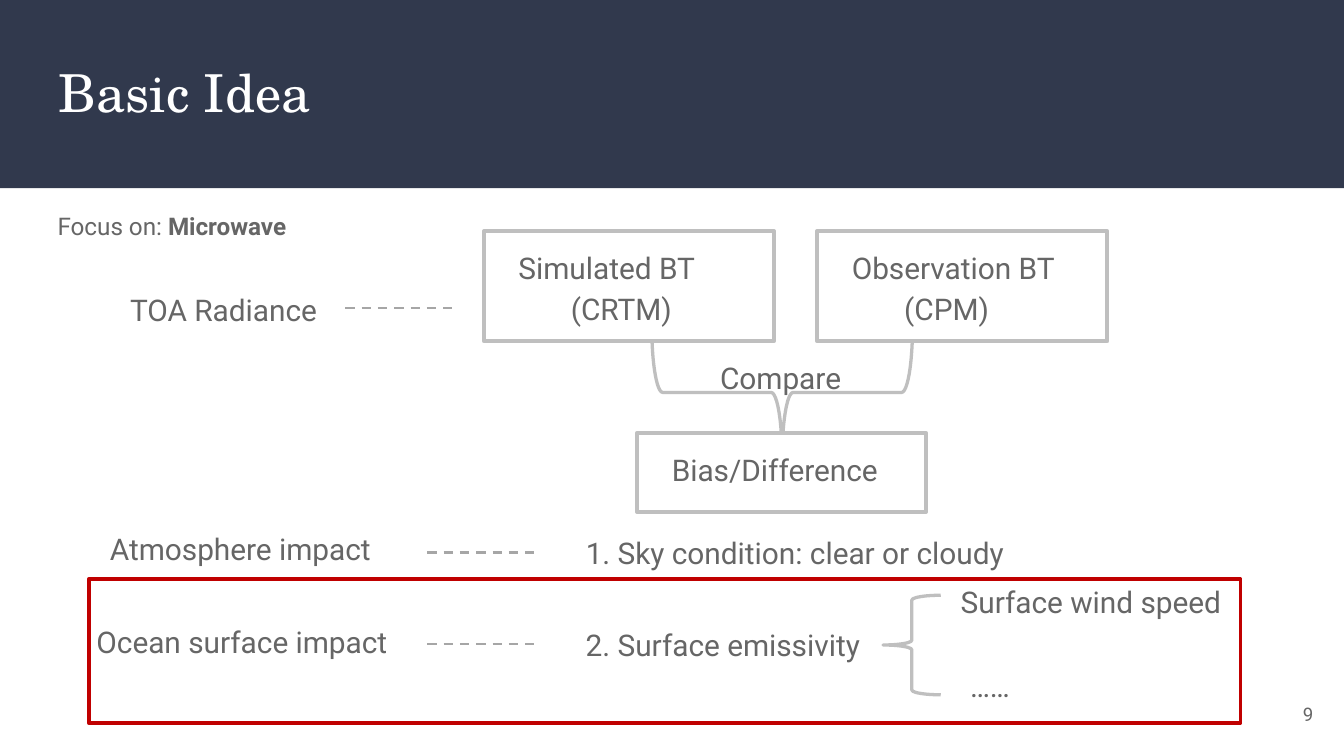
"""Build the "Basic Idea" slide comparing simulated and observed brightness temperature."""
from lxml.etree import SubElement
from pptx import Presentation
from pptx.dml.color import RGBColor
from pptx.enum.dml import MSO_LINE_DASH_STYLE as Dash
from pptx.enum.shapes import MSO_CONNECTOR as Connector, MSO_SHAPE as Shape
from pptx.enum.text import MSO_ANCHOR as Anchor, PP_ALIGN as Align
from pptx.oxml.ns import qn
from pptx.util import Inches, Pt

COLORS = {"navy": "31394D", "white": "FFFFFF", "text": "666666",
          "outline": "BFBFBF", "dash": "A6A6A6", "red": "C00000"}
BODY, HEADING = "Roboto", "TeX Gyre Schola"
SLIDE_WIDTH = 10
SLIDE_HEIGHT = SLIDE_WIDTH * 9 / 16
INDENT, DEEP_INDENT = 0.16, 0.55

LABELS = [
    ("TOA Radiance", 0.71, 2.03, 2.1),
    ("Atmosphere impact", 0.56, 3.81, 2.57),
    ("Ocean surface impact", 0.46, 4.5, 2.73),
    ("1. Sky condition: clear or cloudy", 4.1, 3.84, 3.81),
    ("2. Surface emissivity", 4.1, 4.52, 2.86),
]
BRACES = [((5.33, 1.95, 0.98, 1.94), 270), ((6.57, 4.43, 0.43, 0.74), 0)]
OUTLINED = [
    (["Simulated BT", "(CRTM)"], (3.6, 1.72, 2.16, 0.82)),
    (["Observation BT", "(CPM)"], (6.08, 1.72, 2.16, 0.82)),
    (["Bias/Difference"], (4.74, 3.22, 2.15, 0.59)),
]
NOTES = [
    ("Compare", (5.1, 2.54, 1.4, 0.57)),
    ("Surface wind speed", (6.89, 4.2, 2.52, 0.41)),
    ("……", (6.96, 4.83, 1.4, 0.57)),
]
DASHES = [(2.57, 2.29), (3.18, 4.11), (3.18, 4.79)]
DASH_LENGTH = 0.84
LABEL_HEIGHT = 0.59


def rgb(name):
    return RGBColor.from_string(COLORS[name])


def add_shape(slide, kind, place, fill=None, line=None, width=2):
    shape = slide.shapes.add_shape(kind, *map(Inches, place))
    shape.shadow.inherit = False
    if fill:
        shape.fill.solid()
        shape.fill.fore_color.rgb = rgb(fill)
    else:
        shape.fill.background()
    if line:
        shape.line.color.rgb = rgb(line)
        shape.line.width = Pt(width)
    else:
        shape.line.fill.background()
    return shape


def add_text_box(slide, place):
    return slide.shapes.add_textbox(*map(Inches, place))


def prepare(box, anchor=Anchor.TOP):
    frame = box.text_frame
    frame.word_wrap = True
    frame.vertical_anchor = anchor
    frame.margin_left = frame.margin_right = Inches(0.1)
    frame.margin_top = frame.margin_bottom = Inches(0.1)
    return frame


def add_run(para, text, size=16, color="text", font=BODY, bold=False):
    span = para.add_run()
    span.text = text
    span.font.size, span.font.name, span.font.bold = Pt(size), font, bold
    span.font.color.rgb = rgb(color)


def style_body(para, indent=INDENT):
    para.alignment = Align.LEFT
    para.line_spacing = 1.15
    properties = para._p.get_or_add_pPr()
    properties.set("marL", str(Inches(indent)))
    properties.set("indent", "0")


def write_lines(box, lines):
    frame = prepare(box)
    for number, text in enumerate(lines):
        para = frame.add_paragraph() if number else frame.paragraphs[0]
        style_body(para, DEEP_INDENT if number else INDENT)
        add_run(para, text)


def add_dash(slide, left, top):
    line = slide.shapes.add_connector(
        Connector.STRAIGHT, *map(Inches, (left, top, left + DASH_LENGTH, top)))
    line.line.color.rgb = rgb("dash")
    line.line.width = Pt(1.25)
    line.line.dash_style = Dash.DASH
    SubElement(line._element.spPr, qn("a:effectLst"))


def main():
    deck = Presentation()
    deck.slide_width, deck.slide_height = Inches(SLIDE_WIDTH), Inches(SLIDE_HEIGHT)
    page = deck.slides.add_slide(deck.slide_layouts[6])

    add_shape(page, Shape.RECTANGLE, (0, 0, SLIDE_WIDTH, 1.4), "navy")
    title = prepare(add_text_box(page, (0.34, 0.35, 9.32, 0.68)))
    add_run(title.paragraphs[0], "Basic Idea", 28, "white", HEADING)

    focus = prepare(add_text_box(page, (0.17, 1.44, 2.51, 0.41))).paragraphs[0]
    style_body(focus)
    add_run(focus, "Focus on: ", 13)
    add_run(focus, "Microwave", 13, bold=True)

    for text, left, top, width in LABELS:
        place = (left, top, width, LABEL_HEIGHT)
        write_lines(add_shape(page, Shape.RECTANGLE, place, "white"), [text])
    for place, angle in BRACES:
        brace = add_shape(page, Shape.LEFT_BRACE, place, line="outline", width=1.75)
        brace.rotation = angle
    for lines, place in OUTLINED:
        write_lines(add_shape(page, Shape.RECTANGLE, place, "white", "outline"), lines)
    for text, place in NOTES:
        write_lines(add_text_box(page, place), [text])
    for left, top in DASHES:
        add_dash(page, left, top)
    add_shape(page, Shape.RECTANGLE, (0.66, 4.31, 8.57, 1.07), line="red")

    number = prepare(add_text_box(page, (9.27, 5.1, 0.6, 0.43)), Anchor.MIDDLE)
    number.paragraphs[0].alignment = Align.RIGHT
    add_run(number.paragraphs[0], "9", 10)

    deck.save("out.pptx")


if __name__ == "__main__":
    main()
